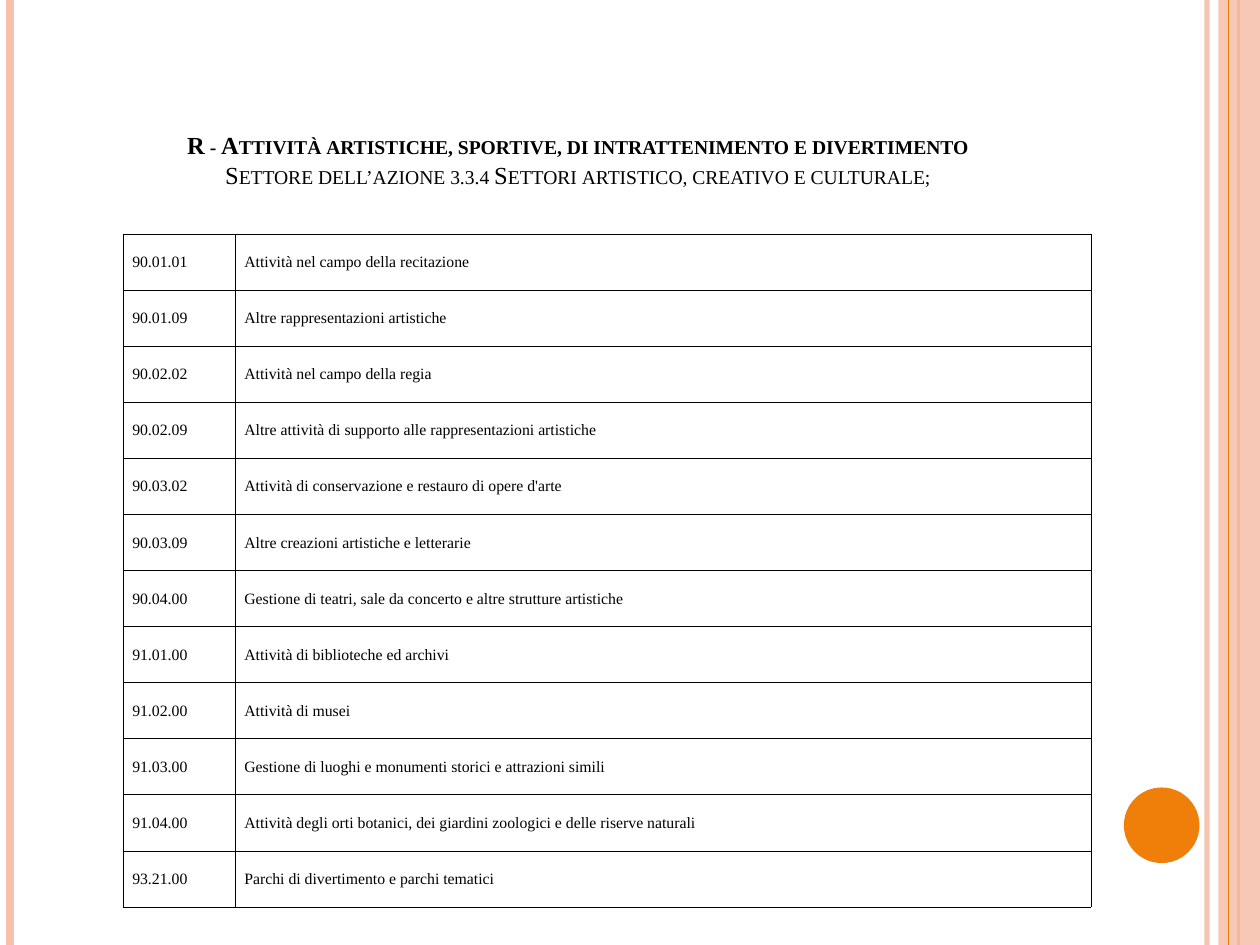
from lxml.etree import SubElement
from pptx import Presentation
from pptx.dml.color import RGBColor
from pptx.enum.shapes import MSO_CONNECTOR as Connector, MSO_SHAPE as Shape
from pptx.enum.text import MSO_ANCHOR as Anchor, PP_ALIGN as Align
from pptx.oxml.ns import qn
from pptx.util import Inches, Pt

FONT = "Times New Roman"
BLACK, ORANGE, PEACH = "000000", "F07F09", "F6C0AB"
SLIDE_WIDTH, SLIDE_HEIGHT = 10, 7.5
TABLE_WIDTHS, TABLE_HEIGHT = (0.89, 6.79), 5.34

HEADING = "R - Attività artistiche, sportive, di intrattenimento e divertimento"
SECTOR = "Settore dell’azione 3.3.4 Settori artistico, creativo e culturale;"
ACTIVITIES = [
    ("90.01.01", "Attività nel campo della recitazione"),
    ("90.01.09", "Altre rappresentazioni artistiche"),
    ("90.02.02", "Attività nel campo della regia"),
    ("90.02.09", "Altre attività di supporto alle rappresentazioni artistiche"),
    ("90.03.02", "Attività di conservazione e restauro di opere d'arte"),
    ("90.03.09", "Altre creazioni artistiche e letterarie"),
    ("90.04.00", "Gestione di teatri, sale da concerto e altre strutture artistiche"),
    ("91.01.00", "Attività di biblioteche ed archivi"),
    ("91.02.00", "Attività di musei"),
    ("91.03.00", "Gestione di luoghi e monumenti storici e attrazioni simili"),
    ("91.04.00", "Attività degli orti botanici, dei giardini zoologici e delle riserve naturali"),
    ("93.21.00", "Parchi di divertimento e parchi tematici"),
]


def color(hex_string):
    return RGBColor.from_string(hex_string)


def set_opacity(element, percent):
    solid = next(element.iter(qn("a:srgbClr")))
    SubElement(solid, qn("a:alpha"), val=str(percent * 1000))


def add_stripe(slide, x, hex_string, width, opacity=100):
    stripe = slide.shapes.add_connector(
        Connector.STRAIGHT, Inches(x), 0, Inches(x), Inches(SLIDE_HEIGHT))
    stripe.line.color.rgb = color(hex_string)
    stripe.line.width = Pt(width)
    properties = stripe.element.spPr
    SubElement(properties, qn("a:effectLst"))
    if opacity < 100:
        set_opacity(properties, opacity)


def add_block(slide, preset, left, top, width, height, hex_string, opacity=100):
    block = slide.shapes.add_shape(
        preset, Inches(left), Inches(top), Inches(width), Inches(height))
    block.shadow.inherit = False
    block.fill.solid()
    block.fill.fore_color.rgb = color(hex_string)
    block.line.fill.background()
    if opacity < 100:
        set_opacity(block.element.spPr, opacity)


def add_run(paragraph, text, size, bold=False):
    run = paragraph.add_run()
    run.text = text
    run.font.name = FONT
    run.font.size = Pt(size)
    run.font.bold = bold
    run.font.color.rgb = color(BLACK)
    return run


def add_title(slide):
    title = slide.shapes.add_textbox(
        Inches(0.5), Inches(0.3), Inches(8.17), Inches(1.25)).text_frame
    title.word_wrap = True
    title.vertical_anchor = Anchor.BOTTOM
    paragraph = title.paragraphs[0]
    paragraph.alignment = Align.CENTER
    paragraph.space_before = Pt(6)
    heading = add_run(paragraph, HEADING, 14, bold=True)
    paragraph.add_line_break()
    sector = add_run(paragraph, SECTOR, 14)
    for run in (heading, sector):
        run.font._element.set("cap", "small")


def add_borders(cell):
    properties = cell._tc.get_or_add_tcPr()
    for index, side in enumerate(("lnL", "lnR", "lnT", "lnB")):
        border = properties.makeelement(qn(f"a:{side}"), {"w": str(Pt(0.5))})
        properties.insert(index, border)
        fill = SubElement(border, qn("a:solidFill"))
        SubElement(fill, qn("a:srgbClr"), val=BLACK)


def fill_cell(cell, text):
    cell.fill.background()
    cell.vertical_anchor = Anchor.MIDDLE
    cell.margin_left = cell.margin_right = Inches(0.07)
    cell.margin_top = cell.margin_bottom = Inches(0.05)
    add_run(cell.text_frame.paragraphs[0], text, 9)
    add_borders(cell)


def add_activity_table(slide):
    table = slide.shapes.add_table(
        len(ACTIVITIES), len(TABLE_WIDTHS), Inches(0.98), Inches(1.86),
        Inches(sum(TABLE_WIDTHS)), Inches(TABLE_HEIGHT)).table
    table.first_row = table.horz_banding = False
    for column, width in zip(table.columns, TABLE_WIDTHS):
        column.width = Inches(width)
    for row, activity in zip(table.rows, ACTIVITIES):
        row.height = Inches(TABLE_HEIGHT / len(ACTIVITIES))
        for cell, text in zip(row.cells, activity):
            fill_cell(cell, text)


def main():
    deck = Presentation()
    deck.slide_width, deck.slide_height = Inches(SLIDE_WIDTH), Inches(SLIDE_HEIGHT)
    slide = deck.slides.add_slide(deck.slide_layouts[6])
    add_stripe(slide, 9.58, PEACH, 3, opacity=93)
    add_stripe(slide, 0.08, PEACH, 4.5)
    add_stripe(slide, 9.83, ORANGE, 1.5)
    add_block(slide, Shape.RECTANGLE, 9.67, 0, 0.33, SLIDE_HEIGHT, PEACH, opacity=87)
    add_stripe(slide, 9.75, ORANGE, 0.75)
    add_block(slide, Shape.OVAL, 8.92, 6.25, 0.6, 0.6, ORANGE)
    add_title(slide)
    add_activity_table(slide)
    deck.save("out.pptx")


if __name__ == "__main__":
    main()
